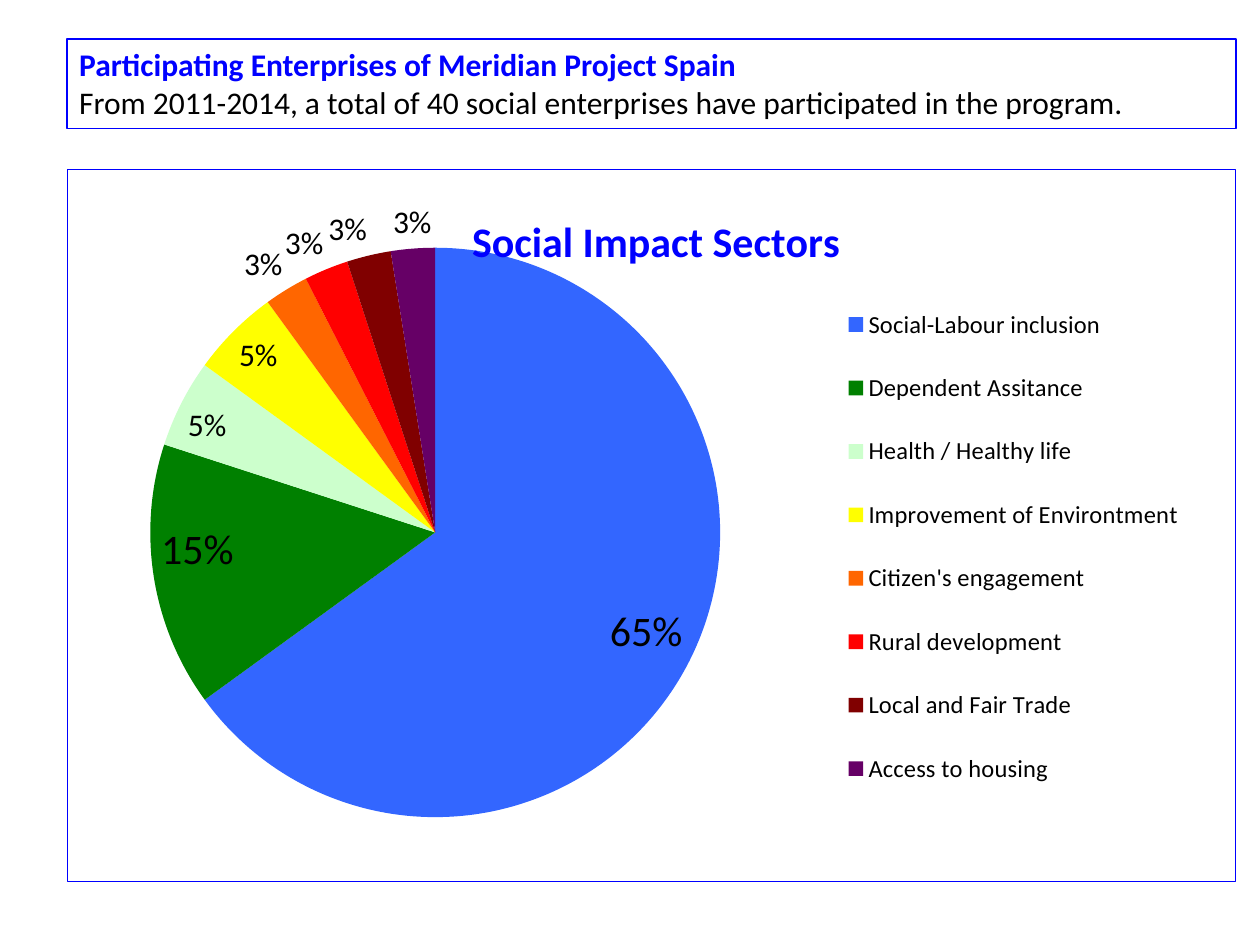
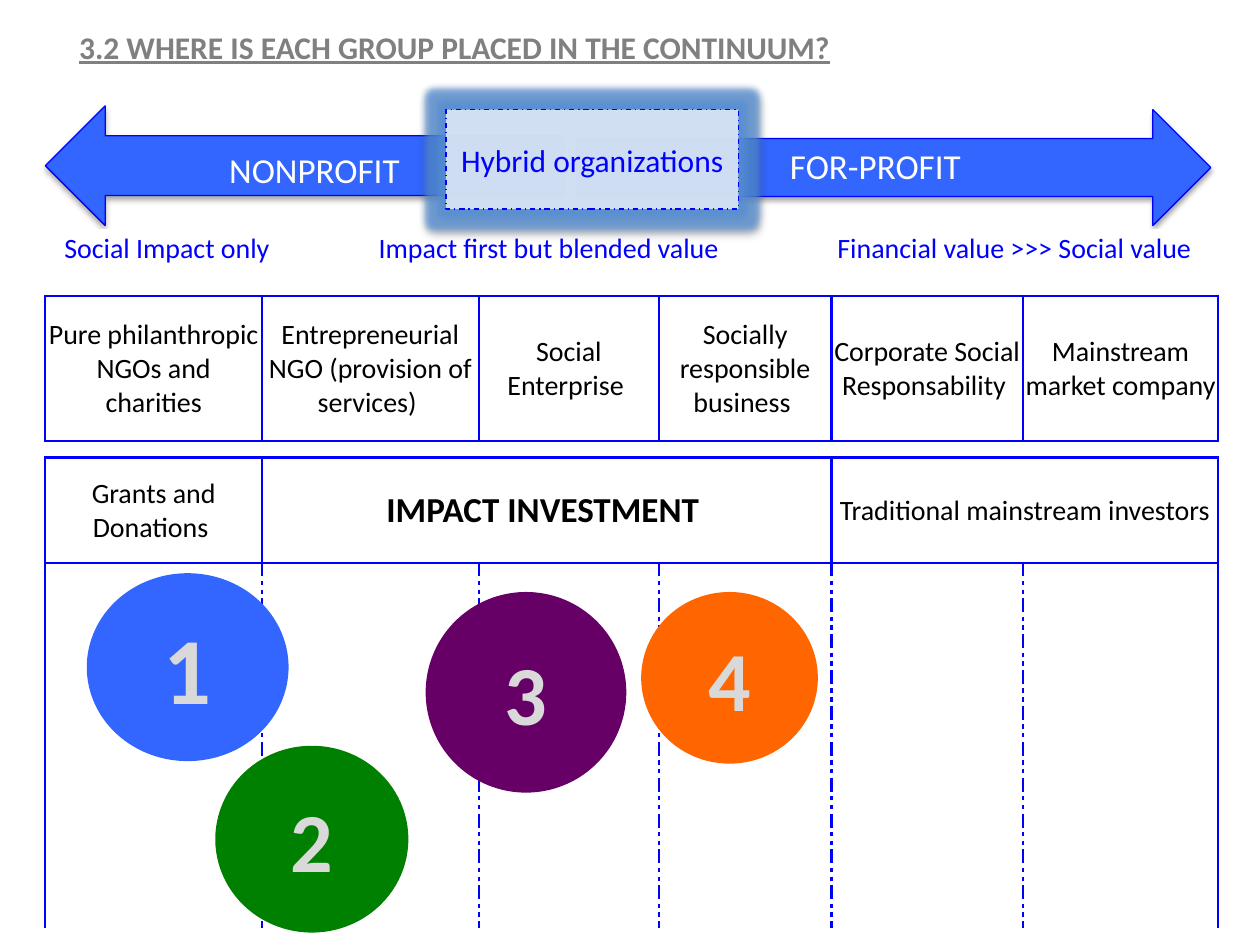
from dataclasses import dataclass

from pptx import Presentation
from pptx.chart.data import CategoryChartData
from pptx.dml.color import RGBColor
from pptx.enum.chart import XL_CHART_TYPE, XL_LABEL_POSITION, XL_LEGEND_POSITION
from pptx.enum.dml import MSO_LINE
from pptx.enum.shapes import MSO_SHAPE
from pptx.enum.text import MSO_ANCHOR, PP_ALIGN
from pptx.oxml import parse_xml
from pptx.oxml.ns import nsdecls, qn
from pptx.util import Inches, Pt

RECT, OVAL = MSO_SHAPE.RECTANGLE, MSO_SHAPE.OVAL
LEFT_ARROW, RIGHT_ARROW = MSO_SHAPE.LEFT_ARROW, MSO_SHAPE.RIGHT_ARROW
TOP, MIDDLE = MSO_ANCHOR.TOP, MSO_ANCHOR.MIDDLE
LEFT, CENTER = PP_ALIGN.LEFT, PP_ALIGN.CENTER
INSIDE, OUTSIDE = XL_LABEL_POSITION.INSIDE_END, XL_LABEL_POSITION.OUTSIDE_END
DASH_DOT = MSO_LINE.DASH_DOT


@dataclass(frozen=True)
class Theme:
    font: str = "Calibri"
    accent: str = "0000FF"
    black: str = "000000"
    white: str = "FFFFFF"
    gray: str = "808080"
    digit: str = "D9D9D9"
    glow: str = "558ED5"
    blue: str = "3366FF"
    green: str = "008000"
    mint: str = "CCFFCC"
    yellow: str = "FFFF00"
    orange: str = "FF6600"
    red: str = "FF0000"
    maroon: str = "800000"
    purple: str = "660066"
    legend: int = 14
    cell: int = 16
    body: int = 18
    strong: int = 20
    large: int = 24
    number: int = 48
    thin: float = 0.75
    grid: float = 1.5


T = Theme()
TABLE_LEFT = 0.36
COLS = [1.72, 1.72, 1.43, 1.37, 1.52, 1.55]
SECTORS = [
    ("Social-Labour inclusion", 65, T.blue),
    ("Dependent Assitance", 15, T.green),
    ("Health / Healthy life", 5, T.mint),
    ("Improvement of Environtment", 5, T.yellow),
    ("Citizen's engagement", 2.5, T.orange),
    ("Rural development", 2.5, T.red),
    ("Local and Fair Trade", 2.5, T.maroon),
    ("Access to housing", 2.5, T.purple),
]


# Text
def style_font(font, size, color=T.black, bold=False):
    font.name, font.size, font.bold = T.font, Pt(size), bold
    font.color.rgb = RGBColor.from_string(color)


def add_run(p, text, size, color=T.black, bold=False):
    r = p.add_run()
    r.text = text
    style_font(r.font, size, color, bold)
    return r


def inches(box):
    return [Inches(v) for v in box]


# Shapes
def add_effects(sp, glow=False):
    sp_pr = sp._element.spPr
    for old in sp_pr.findall(qn("a:effectLst")):
        sp_pr.remove(old)
    halo = (f'<a:glow rad="{Pt(8)}"><a:srgbClr val="{T.glow}">'
            '<a:alpha val="75000"/></a:srgbClr></a:glow>') if glow else ""
    sp_pr.append(parse_xml(
        f'<a:effectLst {nsdecls("a")}>{halo}'
        f'<a:outerShdw blurRad="{Pt(3.1)}" dist="{Pt(1.8)}" dir="5400000" rotWithShape="0">'
        f'<a:srgbClr val="{T.black}"><a:alpha val="35000"/></a:srgbClr>'
        '</a:outerShdw></a:effectLst>'))


def add_box(slide, preset, box, fill=None, line=T.accent, width=T.thin,
            anchor=MIDDLE, align=CENTER):
    """Add a flat shape and return it with its first paragraph."""
    sp = slide.shapes.add_shape(preset, *inches(box))
    sp.shadow.inherit = False
    if fill:
        sp.fill.solid()
        sp.fill.fore_color.rgb = RGBColor.from_string(fill)
    else:
        sp.fill.background()
    sp.line.color.rgb = RGBColor.from_string(line)
    sp.line.width = Pt(width)
    tf = sp.text_frame
    tf.word_wrap, tf.vertical_anchor = True, anchor
    p = tf.paragraphs[0]
    p.alignment = align
    return sp, p


def add_arrow(slide, preset, box, runs):
    sp, p = add_box(slide, preset, box, fill=T.blue, anchor=TOP)
    add_effects(sp)
    for text, size in runs:
        add_run(p, text, size, T.white)


def add_hybrid_box(slide, box, text):
    sp, p = add_box(slide, RECT, box, fill=T.white)
    color = sp._element.spPr.find(qn("a:solidFill"))[0]
    color.append(parse_xml(f'<a:alpha {nsdecls("a")} val="72000"/>'))
    sp.line.dash_style = DASH_DOT
    add_effects(sp, glow=True)
    add_run(p, text, T.body, T.accent)


def add_group_circle(slide, box, number, color, size=T.number, width=4.5):
    _, p = add_box(slide, OVAL, box, fill=color, line=color, width=width)
    add_run(p, number, size, T.digit, bold=True)


# Tables
def set_borders(cell, dashes):
    """Draw borders; dashes maps the sides L, R, T, B to a dash name."""
    tc_pr = cell._tc.get_or_add_tcPr()
    sides = [side for side in "LRTB" if side in dashes]
    for i, side in enumerate(sides):
        tc_pr.insert(i, parse_xml(
            f'<a:ln{side} {nsdecls("a")} w="{Pt(T.grid)}"><a:solidFill>'
            f'<a:srgbClr val="{T.accent}"/></a:solidFill>'
            f'<a:prstDash val="{dashes[side]}"/></a:ln{side}>'))


def add_row_table(slide, top, height, cols, texts=None, borders=None,
                  color=T.black, emphasis=None):
    """Add a one-row table; borders gives the dashes for a column index."""
    box = inches((TABLE_LEFT, top, sum(cols), height))
    table = slide.shapes.add_table(1, len(cols), *box).table
    table.first_row = table.horz_banding = False
    for i, width in enumerate(cols):
        table.columns[i].width = Inches(width)
        cell = table.cell(0, i)
        cell.fill.solid()
        cell.fill.fore_color.rgb = RGBColor.from_string(T.white)
        cell.margin_left = cell.margin_right = cell.margin_top = Inches(0.01)
        cell.margin_bottom = 0
        cell.vertical_anchor = MIDDLE
        if borders:
            set_borders(cell, borders(i))
        if texts:
            p = cell.text_frame.paragraphs[0]
            p.alignment = CENTER
            strong = i == emphasis
            add_run(p, texts[i], T.strong if strong else T.cell, color, strong)


def all_solid(_):
    return dict.fromkeys("LRTB", "solid")


def dashed_inside(i):
    return {"L": "solid" if i == 0 else "sysDashDotDot",
            "R": "solid" if i == len(COLS) - 1 else "sysDashDotDot"}


# Chart
def set_layout(parent, after, x, y, w=None, h=None, inner=False):
    for old in parent.findall(qn("c:layout")):
        parent.remove(old)
    target = '<c:layoutTarget val="inner"/>' if inner else ""
    sizes = f'<c:w val="{w}"/><c:h val="{h}"/>' if w else ""
    layout = parse_xml(
        f'<c:layout {nsdecls("c")}><c:manualLayout>{target}'
        '<c:xMode val="edge"/><c:yMode val="edge"/>'
        f'<c:x val="{x}"/><c:y val="{y}"/>{sizes}</c:manualLayout></c:layout>')
    if after:
        parent.find(qn(after)).addnext(layout)
    else:
        parent.insert(0, layout)


def label_slice(point, value, color):
    point.format.fill.solid()
    point.format.fill.fore_color.rgb = RGBColor.from_string(color)
    label = point.data_label
    style_font(label.font, T.large if value > 10 else T.body)
    label.position = INSIDE if value >= 5 else OUTSIDE


def add_sector_pie(slide, box):
    data = CategoryChartData()
    data.categories = [name for name, _, _ in SECTORS]
    data.add_series("Series 1", [value for _, value, _ in SECTORS])
    chart = slide.shapes.add_chart(XL_CHART_TYPE.PIE, *inches(box), data).chart
    style_font(chart.font, 10)

    # Title and legend
    chart.has_title = True
    p = chart.chart_title.text_frame.paragraphs[0]
    add_run(p, "Social Impact Sectors", T.large, T.accent, bold=True)
    set_layout(chart.chart_title._element, "c:tx", 0.34, 0.05)
    chart.has_legend = True
    legend = chart.legend
    legend.position = XL_LEGEND_POSITION.RIGHT
    legend.include_in_layout = False
    style_font(legend.font, T.legend)
    set_layout(legend._element, "c:legendPos", 0.66, 0.15, 0.3, 0.76)

    # Slices
    plot = chart.plots[0]
    plot.vary_by_categories = True
    series = plot.series[0]
    labels = series.data_labels
    labels.show_percentage, labels.show_value = True, False
    labels.number_format, labels.number_format_is_linked = "0%", False
    style_font(labels.font, T.body)
    for i, (_, value, color) in enumerate(SECTORS):
        label_slice(series.points[i], value, color)
    for label in series._element.iter(qn("c:dLbl")):
        label.find(qn("c:showVal")).set("val", "0")
        label.find(qn("c:showPercent")).set("val", "1")

    # Plot area and frame
    space = chart._chartSpace
    plot_area = next(space.iter(qn("c:plotArea")))
    set_layout(plot_area, None, 0.02, 0.11, 0.59, 0.8, inner=True)
    space.find(qn("c:chart")).addnext(parse_xml(
        f'<c:spPr {nsdecls("c", "a")}><a:noFill/><a:ln w="{Pt(T.thin)}"><a:solidFill>'
        f'<a:srgbClr val="{T.accent}"/></a:solidFill></a:ln></c:spPr>'))


# Slides
def build_sectors_slide(slide):
    sp, p = add_box(slide, RECT, (0.53, 0.31, 9.28, 0.71), width=1,
                    anchor=TOP, align=LEFT)
    add_run(p, "Participating Enterprises of Meridian Project Spain",
            T.body, T.accent, bold=True)
    p = sp.text_frame.add_paragraph()
    p.alignment = LEFT
    add_run(p, "From 2011-2014, a total of 40 social enterprises "
               "have participated in the program.", T.body)
    add_sector_pie(slide, (0.53, 1.34, 9.28, 5.66))


def build_continuum_slide(slide):
    # Group grid and heading
    add_row_table(slide, 4.47, 2.89, COLS, borders=dashed_inside)
    heading = slide.shapes.add_textbox(*inches((0.53, 0.17, 7.07, 0.4)))
    r = add_run(heading.text_frame.paragraphs[0],
                "3.2 WHERE IS EACH GROUP PLACED IN THE CONTINUUM?",
                T.body, T.gray, bold=True)
    r.font.underline = True

    # Organization types and continuum arrows
    add_row_table(slide, 2.35, 1.15, COLS, [
        "Pure philanthropic NGOs and charities",
        "Entrepreneurial NGO (provision of services) ",
        "Social Enterprise ",
        "Socially responsible business ",
        "Corporate Social Responsability ",
        "Mainstream market company"], all_solid)
    add_arrow(slide, RIGHT_ARROW, (4.58, 0.87, 5.03, 0.92),
              [("FOR-PROFIT ", T.strong)])
    add_arrow(slide, LEFT_ARROW, (0.36, 0.84, 4.11, 0.95),
              [("NONPROFIT", T.strong), (" ", T.large)])

    # Funding sources and value captions
    funding_cols = [COLS[0], sum(COLS[1:4]), sum(COLS[4:])]
    add_row_table(slide, 3.63, 0.84, funding_cols, [
        "Grants and Donations ", "IMPACT INVESTMENT ",
        "Traditional mainstream investors"], all_solid, emphasis=1)
    add_row_table(slide, 1.82, 0.3, [1.93, 4.13, 3.26], [
        "Social Impact only", "Impact first but blended value",
        "Financial value >>> Social value"], color=T.accent)
    add_hybrid_box(slide, (3.54, 0.87, 2.32, 0.79), "Hybrid organizations")

    # Groups
    add_group_circle(slide, (0.71, 4.57, 1.56, 1.45), "1", T.blue, size=54, width=3)
    add_group_circle(slide, (1.74, 5.95, 1.47, 1.42), "2", T.green)
    add_group_circle(slide, (3.41, 4.73, 1.53, 1.53), "3", T.purple)
    add_group_circle(slide, (5.12, 4.73, 1.34, 1.3), "4", T.orange)


def main():
    prs = Presentation()
    prs.slide_width, prs.slide_height = Inches(10), Inches(7.5)
    for build in (build_sectors_slide, build_continuum_slide):
        build(prs.slides.add_slide(prs.slide_layouts[6]))
    prs.save("out.pptx")


if __name__ == "__main__":
    main()
